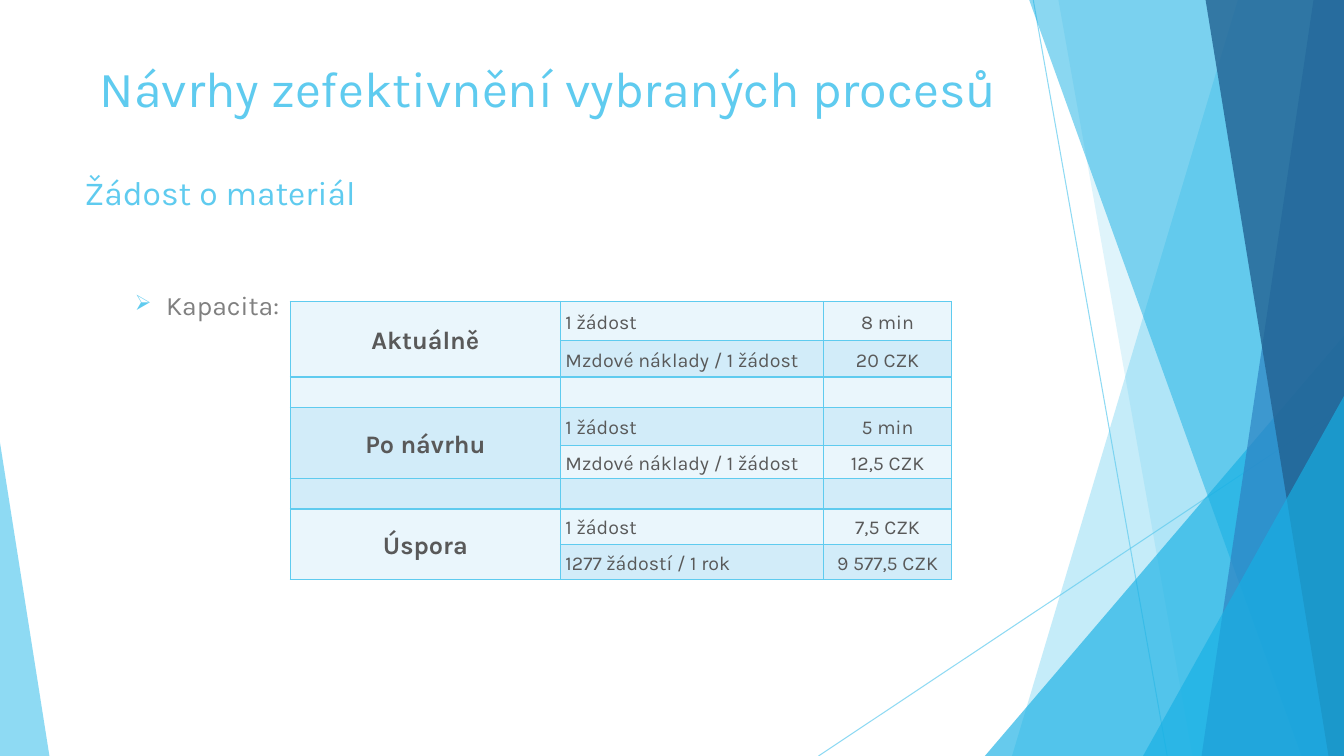
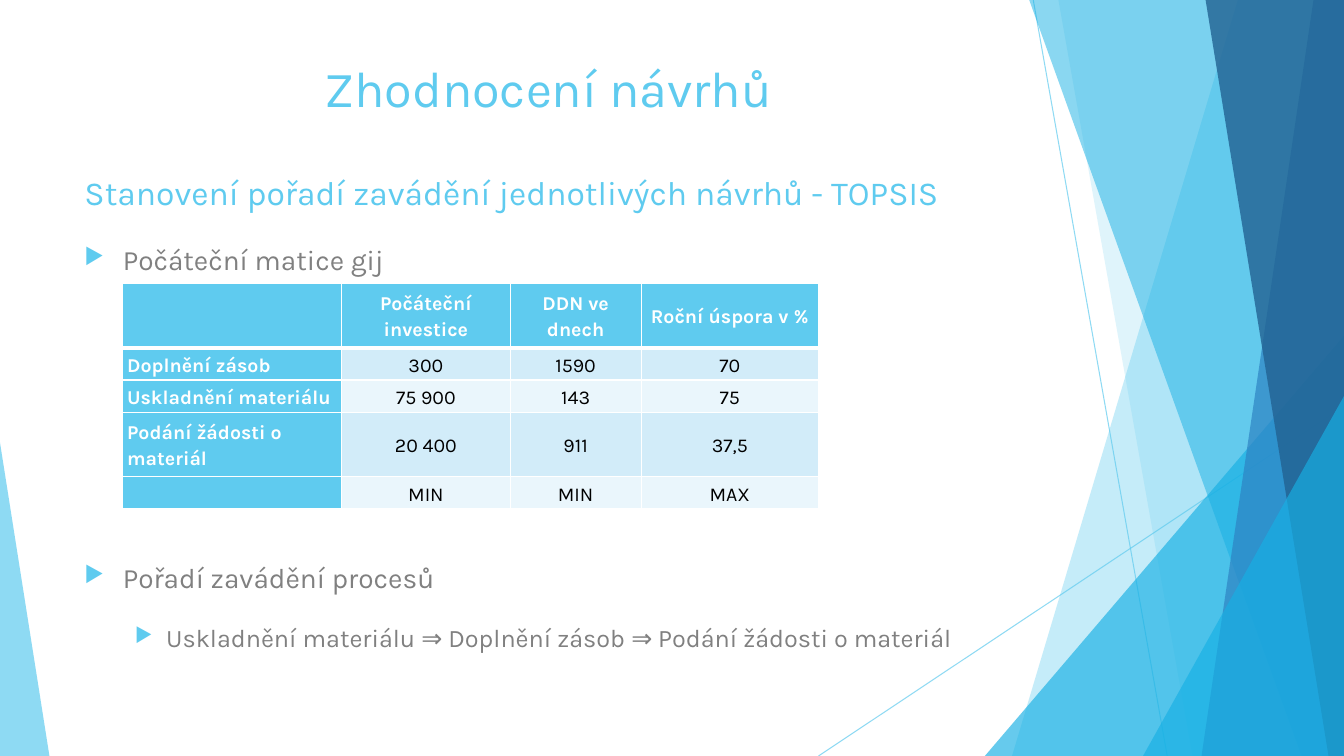
from lxml import etree
from pptx import Presentation
from pptx import util as u
from pptx.dml.color import RGBColor
from pptx.enum import shapes, text
from pptx.oxml.ns import qn

SKY = RGBColor(0x5F, 0xCB, 0xEF)
AZURE = RGBColor(0x17, 0xB0, 0xE4)
BLUE = RGBColor(0x2E, 0x83, 0xC3)
NAVY = RGBColor(0x22, 0x62, 0x92)
PALE = RGBColor(0xEA, 0xF6, 0xFC)
LIGHT = RGBColor(0xD2, 0xEC, 0xF9)
GRAY = RGBColor(0x80, 0x80, 0x80)
DARK = RGBColor(0x59, 0x59, 0x59)
BLACK = RGBColor(0, 0, 0)
WHITE = RGBColor(255, 255, 255)
FONT = "Karla"
LEFT, CENTER = text.PP_ALIGN.LEFT, text.PP_ALIGN.CENTER
TOP, MIDDLE = text.MSO_ANCHOR.TOP, text.MSO_ANCHOR.MIDDLE

presentation = Presentation()
presentation.slide_width = u.Inches(13.33)
presentation.slide_height = u.Inches(7.5)
# The grid has 100 columns and 100 rows.
COLUMN = presentation.slide_width / 100
ROW = presentation.slide_height / 100
TEXT_LEFT, TEXT_WIDTH = 5.55, 70.5

# Bands: left edge at the top and bottom of the slide, reaching the right edge.
# Triangles: left, top, width and apex position, standing on the bottom edge.
FACETS = [
    ("band", (92.1, 75.3), SKY, 36),
    ("band", (78.75, 88.73), SKY, 20),
    ("triangle", (73.28, 44.4, 26.72, 1), AZURE, 66),
    ("band", (76.58, 96.83), AZURE, 50),
    ("band", (97.73, 89.4), BLUE, 70),
    ("band", (89.7, 98.85), NAVY, 80),
    ("triangle", (85.05, 52.4, 14.95, 1), AZURE, 66),
    ("triangle", (0, 58.53, 3.68, 0), SKY, 70),
]
RAYS = [(76.88, 0, 86.85, 100), (100, 53.73, 60.9, 100)]
HEADINGS = [
    ("Návrhy zefektivnění vybraných procesů", "Žádost o materiál"),
    ("Zhodnocení návrhů", "Stanovení pořadí zavádění jednotlivých návrhů - TOPSIS"),
]


def add_text(slide, top, height, lines, color=GRAY, anchor=TOP, align=LEFT, spacing=1):
    """Each line is (text, size, bullet, level); a bullet of None leaves it plain."""
    box = slide.shapes.add_textbox(
        round(TEXT_LEFT * COLUMN), round(top * ROW),
        round(TEXT_WIDTH * COLUMN), round(height * ROW))
    frame = box.text_frame
    frame.word_wrap = True
    frame.vertical_anchor = anchor
    for index, (words, size, bullet, level) in enumerate(lines):
        paragraph = frame.add_paragraph() if index else frame.paragraphs[0]
        paragraph.text = words
        paragraph.level = level
        if bullet:
            properties = paragraph._p.get_or_add_pPr()
            margin, hang = [(0.38, 0.38), (0.81, 0.31)][level]
            properties.set("marL", str(u.Inches(margin)))
            properties.set("indent", str(-u.Inches(hang)))
            bullet_color = etree.SubElement(properties, qn("a:buClr"))
            etree.SubElement(bullet_color, qn("a:srgbClr"), val=str(SKY))
            etree.SubElement(properties, qn("a:buSzPct"), val="80000")
            etree.SubElement(properties, qn("a:buChar"), char=bullet)
            paragraph.space_before = u.Pt(10)
        paragraph.alignment = align
        paragraph.line_spacing = spacing
        paragraph.font.name = FONT
        paragraph.font.size = u.Pt(size)
        paragraph.font.color.rgb = color


def add_table(slide, left, top, widths, heights, cells, border, header_line=1):
    """Each cell is (text, fill, size, bold, color, alignment)."""
    table = slide.shapes.add_table(
        len(heights), len(widths), round(left * COLUMN), round(top * ROW),
        round(sum(widths) * COLUMN), round(sum(heights) * ROW)).table
    table.first_row = table.horz_banding = False
    for column, width in zip(table.columns, widths):
        column.width = round(width * COLUMN)
    for row, height in zip(table.rows, heights):
        row.height = round(height * ROW)
    for r, row in enumerate(cells):
        for c, (words, fill, size, bold, color, align) in enumerate(row):
            cell = table.cell(r, c)
            cell.margin_left = cell.margin_right = u.Inches(0.05)
            cell.margin_top = cell.margin_bottom = 0
            cell.vertical_anchor = MIDDLE
            for side in "LRTB":
                on_header_line = (r, side) in [(0, "B"), (1, "T")]
                width = u.Pt(header_line if on_header_line else 1)
                line = etree.SubElement(
                    cell._tc.get_or_add_tcPr(), qn("a:ln" + side), w=str(width))
                solid = etree.SubElement(line, qn("a:solidFill"))
                etree.SubElement(solid, qn("a:srgbClr"), val=str(border))
            cell.fill.solid()
            cell.fill.fore_color.rgb = fill
            if not words:
                continue
            paragraph = cell.text_frame.paragraphs[0]
            paragraph.text = words
            paragraph.alignment = align
            paragraph.line_spacing = 1.15
            paragraph.font.name = FONT
            paragraph.font.size = u.Pt(size)
            paragraph.font.bold = bold
            paragraph.font.color.rgb = color
    return table


# Shared backdrop and headings
for title, subtitle in HEADINGS:
    slide = presentation.slides.add_slide(presentation.slide_layouts[6])
    backdrop = []
    for x1, y1, x2, y2 in RAYS:
        ray = slide.shapes.add_connector(
            shapes.MSO_CONNECTOR.STRAIGHT, round(x1 * COLUMN), round(y1 * ROW),
            round(x2 * COLUMN), round(y2 * ROW))
        ray.line.color.rgb = SKY
        ray.line.width = u.Pt(0.75)
        etree.SubElement(ray._element.spPr, qn("a:effectLst"))
        backdrop.append((ray, 70))
    for kind, geometry, color, opacity in FACETS:
        if kind == "band":
            top_x, bottom_x = geometry
            outline = slide.shapes.build_freeform(round(top_x * COLUMN), 0)
            corners = [(100, 0), (100, 100), (bottom_x, 100)]
            outline.add_line_segments(
                [(round(x * COLUMN), round(y * ROW)) for x, y in corners])
            facet = outline.convert_to_shape()
        else:
            left, top, width, apex = geometry
            facet = slide.shapes.add_shape(
                shapes.MSO_SHAPE.ISOSCELES_TRIANGLE, round(left * COLUMN),
                round(top * ROW), round(width * COLUMN), round((100 - top) * ROW))
            facet.adjustments[0] = apex
        facet.shadow.inherit = False
        facet.fill.solid()
        facet.fill.fore_color.rgb = color
        facet.line.fill.background()
        backdrop.append((facet, opacity))
    for shape, opacity in backdrop:
        for color_element in shape._element.spPr.iter(qn("a:srgbClr")):
            etree.SubElement(color_element, qn("a:alpha"), val=str(opacity * 1000))
    add_text(slide, 3.87, 15.33, [(title, 36, None, 0)], SKY, MIDDLE, CENTER)
    add_text(slide, 21.73, 7.33, [(subtitle, 24, None, 0)], SKY, MIDDLE)

capacity_slide, ranking_slide = presentation.slides

# Capacity before and after the proposal
CAPACITY = [
    ("Aktuálně", "1 žádost", "8 min"),
    ("", "Mzdové náklady / 1 žádost", "20 CZK"),
    ("", "", ""),
    ("Po návrhu", "1 žádost", "5 min"),
    ("", "Mzdové náklady / 1 žádost", "12,5 CZK"),
    ("", "", ""),
    ("Úspora", "1 žádost", "7,5 CZK"),
    ("", "1277 žádostí / 1 rok", "9 577,5 CZK"),
]
capacity_cells = []
for r, (label, item, value) in enumerate(CAPACITY):
    fill = LIGHT if r % 2 else PALE
    capacity_cells.append([
        (label, fill, 18, True, DARK, CENTER),
        (item, fill, 14, False, DARK, LEFT),
        (value, fill, 14, False, DARK, CENTER),
    ])
capacity_table = add_table(
    capacity_slide, 21.6, 39.87, [20.1, 19.58, 9.53],
    [5.2, 4.8, 4, 5.07, 4.4, 3.87, 4.67, 4.67], capacity_cells, SKY)
for r in (0, 3, 6):
    capacity_table.cell(r, 0).merge(capacity_table.cell(r + 1, 0))
add_text(capacity_slide, 37.6, 8, [("Kapacita:", 19, "➢", 1)])

# Decision matrix and resulting order
MATRIX = [
    ("", "Počáteční investice", "DDN ve dnech", "Roční úspora v %"),
    ("Doplnění zásob", "300", "1590", "70"),
    ("Uskladnění materiálu", "75 900", "143", "75"),
    ("Podání žádosti o materiál", "20 400", "911", "37,5"),
    ("", "MIN", "MIN", "MAX"),
]
matrix_cells = []
for r, row in enumerate(MATRIX):
    matrix_cells.append([])
    for c, words in enumerate(row):
        heading = r == 0 or c == 0
        fill = SKY if heading else LIGHT if r % 2 else PALE
        matrix_cells[r].append((
            words, fill, 14, heading, WHITE if heading else BLACK,
            CENTER if c else LEFT))
add_text(ranking_slide, 31.47, 7.33, [("Počáteční matice gij", 20, "▶", 0)])
add_table(
    ranking_slide, 9.08, 37.47, [16.35, 12.53, 9.75, 13.2],
    [8.53, 4.27, 4.27, 8.53, 4.27], matrix_cells, WHITE, header_line=3)
add_text(ranking_slide, 71.2, 20.67, [
    ("Pořadí zavádění procesů", 20, "▶", 0),
    ("Uskladnění materiálu ⇒ Doplnění zásob ⇒ Podání žádosti o materiál", 18, "▶", 1),
], spacing=1.5)

presentation.save("out.pptx")
